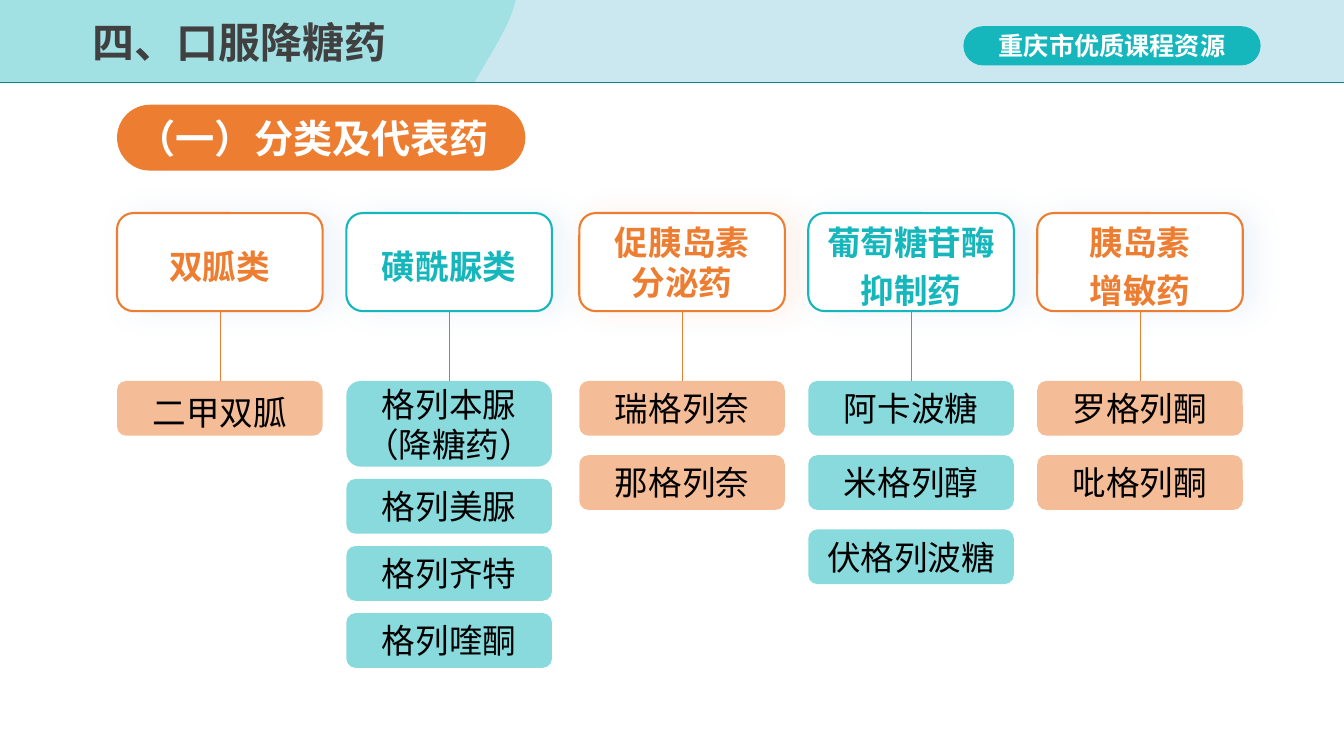
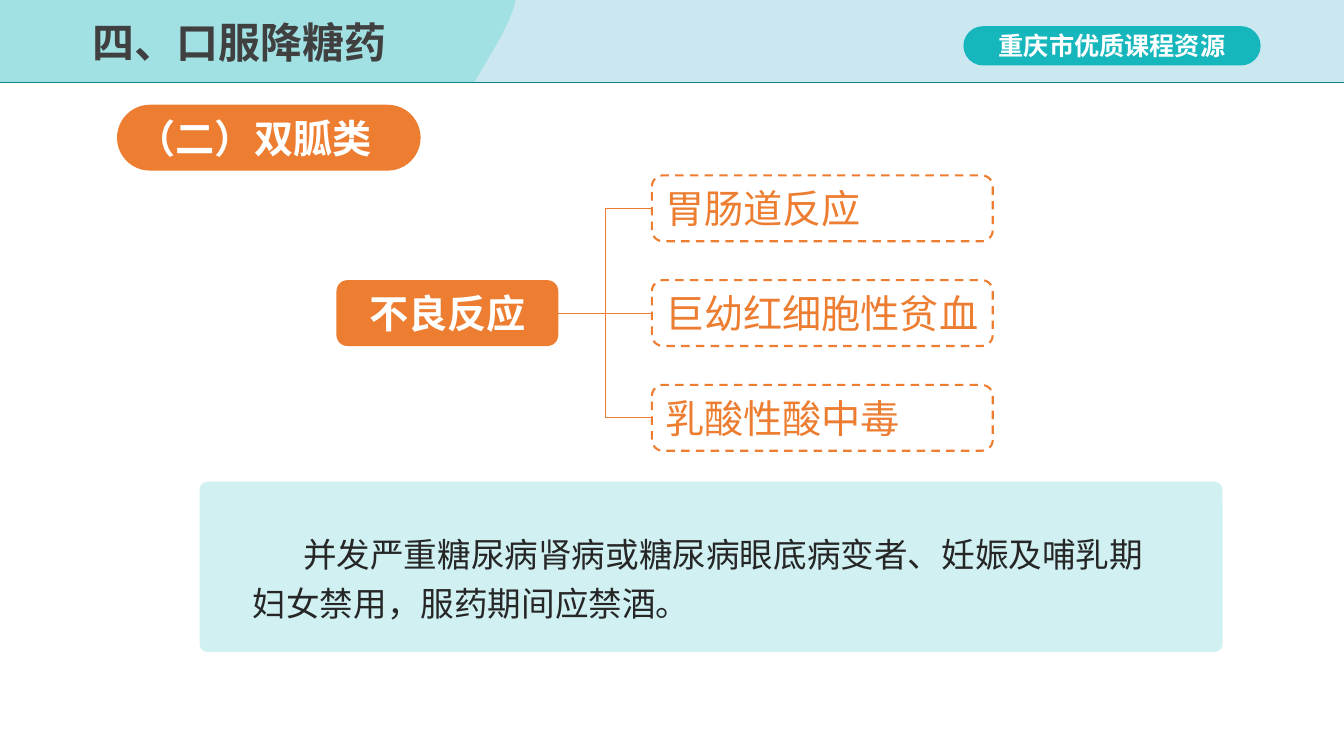
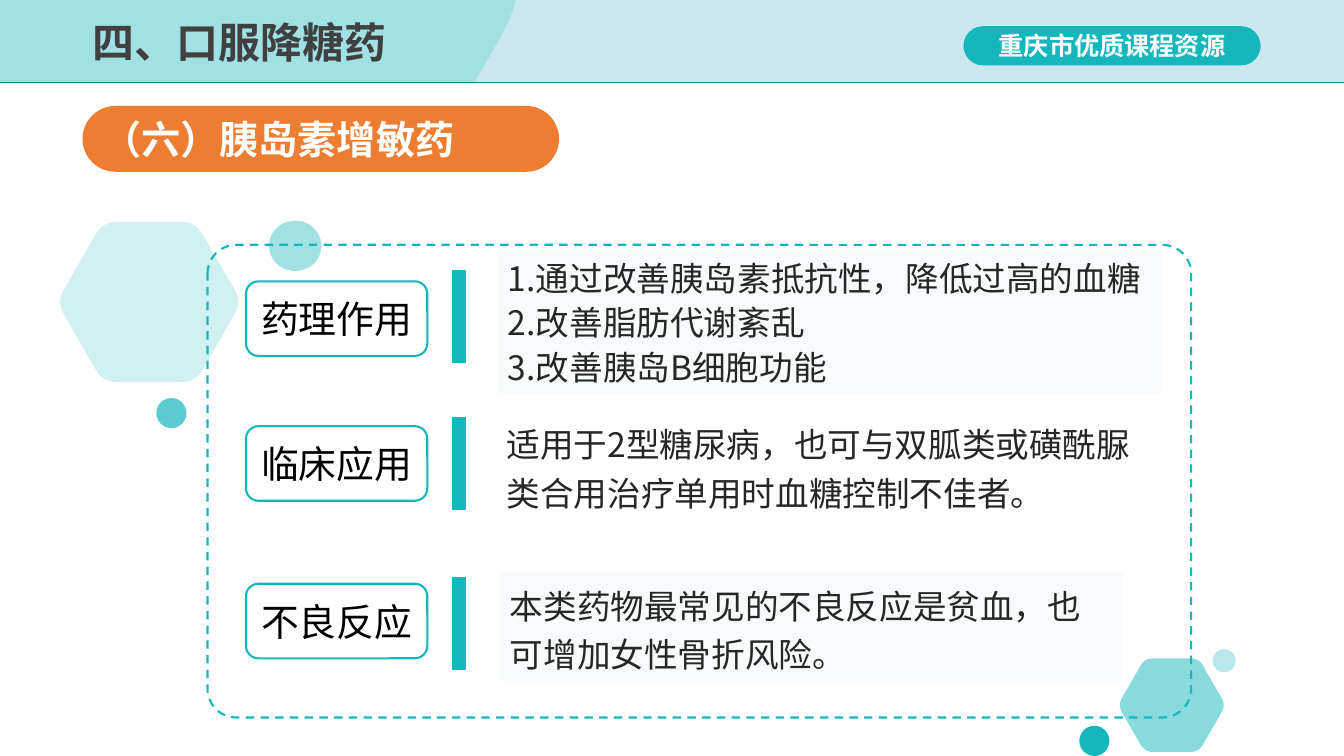
import math

from lxml import etree
from pptx import Presentation
from pptx.dml.color import RGBColor
from pptx.enum import dml, shapes, text
from pptx.oxml import ns
from pptx.util import Cm, Pt

TEAL = RGBColor(0x15, 0xB6, 0xBC)
DARK_TEAL = RGBColor(0x0F, 0x85, 0x8B)
ORANGE = RGBColor(0xED, 0x7D, 0x31)
PALE_BLUE = RGBColor(0xDE, 0xEB, 0xF7)
PANEL_BLUE = RGBColor(0xCC, 0xE8, 0xF1)
SHADOW_BLUE = RGBColor(0x5B, 0x9B, 0xD5)
WHITE = RGBColor(0xFF, 0xFF, 0xFF)
BLACK = RGBColor(0, 0, 0)
TITLE_GRAY = RGBColor(0x40, 0x40, 0x40)
BODY_GRAY = RGBColor(0x26, 0x26, 0x26)
FONT = "Noto Sans CJK SC"

RECT = shapes.MSO_SHAPE.RECTANGLE
ROUND = shapes.MSO_SHAPE.ROUNDED_RECTANGLE
OVAL = shapes.MSO_SHAPE.OVAL
STRAIGHT = shapes.MSO_CONNECTOR.STRAIGHT
ELBOW = shapes.MSO_CONNECTOR.ELBOW
LEFT, CENTER = text.PP_ALIGN.LEFT, text.PP_ALIGN.CENTER
TOP, MIDDLE = text.MSO_ANCHOR.TOP, text.MSO_ANCHOR.MIDDLE


def paint(shape, fill=None, alpha=100, line=None, width=1.5, dash=None,
          radius=None, shadow=None):
    """Set fill, outline, corner radius and shadow; alpha is opacity in percent."""
    properties = shape.element.spPr
    if fill is not None:
        shape.fill.solid()
        shape.fill.fore_color.rgb = fill
        if alpha < 100:
            color = properties.find(ns.qn("a:solidFill"))[0]
            etree.SubElement(color, ns.qn("a:alpha"), val=str(alpha * 1000))
    elif hasattr(shape, "fill"):
        shape.fill.background()
    if line is None:
        shape.line.fill.background()
    else:
        shape.line.color.rgb = line
        shape.line.width = Pt(width)
        if dash is not None:
            shape.line.dash_style = dash
    if radius is not None:
        shape.adjustments[0] = radius
    effects = etree.SubElement(properties, ns.qn("a:effectLst"))
    if shadow is not None:
        outer = etree.SubElement(effects, ns.qn("a:outerShdw"), blurRad=str(Pt(20)),
                                 dist=str(Pt(8)), dir="0", rotWithShape="0")
        color = etree.SubElement(outer, ns.qn("a:srgbClr"), val=str(shadow))
        etree.SubElement(color, ns.qn("a:alpha"), val="10000")
    return shape


def write(shape, words, size, color, bold=False, align=LEFT, spacing=1.0,
          anchor=MIDDLE, wrap=True, indent=None):
    """Fill a shape with text, one paragraph for each line of words."""
    frame = shape.text_frame
    frame.word_wrap = wrap
    frame.vertical_anchor = anchor
    frame.text = words
    for para in frame.paragraphs:
        para.alignment = align
        para.line_spacing = spacing
        if indent is not None:
            para._p.get_or_add_pPr().set("indent", str(indent))
        for span in para.runs:
            look = {"name": FONT, "size": Pt(size), "bold": bold}
            for name, value in look.items():
                setattr(span.font, name, value)
            span.font.color.rgb = color
            etree.SubElement(span._r.get_or_add_rPr(), ns.qn("a:ea"), typeface=FONT)


deck = Presentation()
deck.slide_width, deck.slide_height = Cm(33.87), Cm(19.05)
layout = deck.slide_layouts[5]
for holder in list(layout.placeholders):
    if holder.placeholder_format.type != shapes.PP_PLACEHOLDER.TITLE:
        holder.element.getparent().remove(holder.element)

# Pages with their title and section pill
sections = [
    ("（一）分类及代表药", 2.95, 2.64, 10.29),
    ("（二）双胍类", 2.95, 2.64, 7.65),
    ("（六）胰岛素增敏药", 2.08, 2.67, 12.01),
]
pages = []
for heading, left, top, width in sections:
    page = deck.slides.add_slide(layout)
    title = page.shapes.title
    title.left, title.top, title.width, title.height = Cm(2.08), Cm(0.2), Cm(14.15), Cm(1.88)
    write(title, "四、口服降糖药", 30, TITLE_GRAY, bold=True, spacing=0.9)
    pill = page.shapes.add_shape(ROUND, Cm(left), Cm(top), Cm(width), Cm(1.66))
    paint(pill, ORANGE, radius=0.5)
    write(pill, heading, 28, WHITE, bold=True)
    pages.append(page)
classes_page, biguanide_page, sensitizer_page = pages

# Header band, drawn once and moved into the layout
drawing = classes_page.shapes
band = paint(drawing.add_shape(RECT, 0, 0, deck.slide_width, Cm(2.08)), TEAL, 40)

curve = [(11.96, 2.08), (12.34, 1.4), (12.88, 0.61), (13, 0)]
edge = []
for step in range(13):
    t = step / 12
    weights = [(1 - t) ** 3, 3 * t * (1 - t) ** 2, 3 * t * t * (1 - t), t ** 3]
    edge.append(tuple(Cm(sum(w * point[axis] for w, point in zip(weights, curve)))
                      for axis in (0, 1)))
builder = drawing.build_freeform(deck.slide_width, 0)
builder.add_line_segments([(deck.slide_width, Cm(2.08))] + edge)
sweep = paint(builder.convert_to_shape(), PALE_BLUE, 70)

badge = paint(drawing.add_shape(ROUND, Cm(24.28), Cm(0.66), Cm(7.49), Cm(0.99)),
              TEAL, radius=0.5)
write(badge, "重庆市优质课程资源", 18, WHITE, bold=True, align=CENTER)
rule = paint(drawing.add_connector(STRAIGHT, 0, Cm(2.08), deck.slide_width, Cm(2.08)),
             line=DARK_TEAL, width=1)
for position, part in enumerate((band, sweep, badge, rule), start=2):
    layout.shapes.element.insert(position, part.element)

# Drug classes: a header box, a stem and the drugs below
COLUMN_WIDTH, DRUG_HEIGHT = 5.18, 1.38
columns = [
    # left, class, colour, shadow, class spacing, drug spacing, first height, gap, drugs
    (2.95, "双胍类", ORANGE, SHADOW_BLUE, 1.2, 1.2, DRUG_HEIGHT, 0.49, ["二甲双胍"]),
    (8.73, "磺酰脲类", TEAL, SHADOW_BLUE, 1.2, 1.0, 2.16, 0.31,
     ["格列本脲（降糖药）", "格列美脲", "格列齐特", "格列喹酮"]),
    (14.6, "促胰岛素\n分泌药", ORANGE, ORANGE, 1.0, 1.0, DRUG_HEIGHT, 0.49,
     ["瑞格列奈", "那格列奈"]),
    (20.37, "葡萄糖苷酶\n抑制药", TEAL, SHADOW_BLUE, 1.2, 1.0, DRUG_HEIGHT, 0.49,
     ["阿卡波糖", "米格列醇", "伏格列波糖"]),
    (26.14, "胰岛素\n增敏药", ORANGE, SHADOW_BLUE, 1.2, 1.0, DRUG_HEIGHT, 0.49,
     ["罗格列酮", "吡格列酮"]),
]
for left, name, color, shadow, name_spacing, drug_spacing, height, gap, drugs in columns:
    box = drawing.add_shape(ROUND, Cm(left), Cm(5.37), Cm(COLUMN_WIDTH), Cm(2.47))
    paint(box, WHITE, line=color, shadow=shadow)
    write(box, name, 24, color, bold=True, align=CENTER, spacing=name_spacing, wrap=False)
    middle = Cm(left + COLUMN_WIDTH / 2)
    paint(drawing.add_connector(STRAIGHT, middle, Cm(7.84), middle, Cm(9.6)),
          line=color, width=0.25)
    top = 9.6
    for drug in drugs:
        box = drawing.add_shape(ROUND, Cm(left), Cm(top), Cm(COLUMN_WIDTH), Cm(height))
        paint(box, color, 50)
        write(box, drug, 24, BLACK, align=CENTER, spacing=drug_spacing)
        top += height + gap
        height = DRUG_HEIGHT

# Biguanides: adverse reactions and a caution
drawing = biguanide_page.shapes
root = paint(drawing.add_shape(ROUND, Cm(8.48), Cm(7.06), Cm(5.59), Cm(1.66)), ORANGE)
write(root, "不良反应", 28, WHITE, bold=True, align=CENTER)
reactions = [("胃肠道反应", ELBOW), ("巨幼红细胞性贫血", STRAIGHT), ("乳酸性酸中毒", ELBOW)]
for row, (reaction, kind) in enumerate(reactions):
    box = drawing.add_shape(ROUND, Cm(16.43), Cm(4.42 + 2.64 * row), Cm(8.59), Cm(1.66))
    paint(box, line=ORANGE, dash=dml.MSO_LINE.DASH)
    write(box, reaction, 28, ORANGE)
    branch = drawing.add_connector(kind, 0, 0, 0, 0)
    branch.begin_connect(root, 3)
    branch.end_connect(box, 1)
    paint(branch, line=ORANGE, width=0.5)
paint(drawing.add_shape(ROUND, Cm(5.03), Cm(12.14), Cm(25.78), Cm(4.29)),
      TEAL, 20, radius=0.045)
caution = drawing.add_textbox(Cm(6.12), Cm(13.13), Cm(23.57), Cm(2.64))
write(caution, "并发严重糖尿病肾病或糖尿病眼底病变者、妊娠及哺乳期妇女禁用，服药期间应禁酒。",
      24, BODY_GRAY, spacing=1.2, anchor=TOP, indent=Cm(1.27))

# Insulin sensitizers: hexagons with rounded corners, a frame and dots
drawing = sensitizer_page.shapes
CUT = 0.15
for center_x, center_y, radius, alpha in [(3.76, 7.61, 2.33, 20), (29.53, 17.77, 1.36, 50)]:
    corners = [(center_x + radius * math.cos(math.radians(60 * k)),
                center_y + radius * math.sin(math.radians(60 * k))) for k in range(6)]
    outline = []
    for k, corner in enumerate(corners):
        before, after = corners[k - 1], corners[(k + 1) % 6]
        for step in range(7):
            t = step / 6
            pull_back, pull_on = CUT * (1 - t) ** 2, CUT * t ** 2
            outline.append(tuple(Cm(c + pull_back * (b - c) + pull_on * (a - c))
                                 for b, c, a in zip(before, corner, after)))
    builder = drawing.build_freeform(*outline[0])
    builder.add_line_segments(outline[1:])
    paint(builder.convert_to_shape(), TEAL, alpha)

paint(drawing.add_shape(ROUND, Cm(5.23), Cm(6.17), Cm(24.79), Cm(11.91)),
      line=TEAL, dash=dml.MSO_LINE.DASH, radius=0.061)
dots = [
    (3.94, 10.03, 0.76, 0.76, 70),
    (6.78, 5.56, 1.32, 1.27, 40),
    (27.2, 18.29, 0.76, 0.76, 100),
    (30.56, 16.36, 0.58, 0.58, 30),
]
for *place, alpha in dots:
    paint(drawing.add_shape(OVAL, *map(Cm, place)), TEAL, alpha)

topics = [
    # label, label top, bar top, text place, panel fill, line spacing, text
    ("药理作用", 7.09, 6.83, (12.55, 6.27, 16.71, 3.63), PANEL_BLUE, 1.1,
     "1.通过改善胰岛素抵抗性，降低过高的血糖\n2.改善脂肪代谢紊乱\n3.改善胰岛B细胞功能"),
    ("临床应用", 10.74, 10.52, (12.52, 10.36, 16.36, 2.72), None, 1.2,
     "适用于2型糖尿病，也可与双胍类或磺酰脲类合用治疗单用时血糖控制不佳者。"),
    ("不良反应", 14.71, 14.55, (12.6, 14.43, 15.7, 2.72), PANEL_BLUE, 1.2,
     "本类药物最常见的不良反应是贫血，也可增加女性骨折风险。"),
]
for label, label_top, bar_top, place, fill, spacing, words in topics:
    box = drawing.add_shape(ROUND, Cm(6.2), Cm(label_top), Cm(4.57), Cm(1.88))
    paint(box, line=TEAL)
    write(box, label, 27, BLACK, align=CENTER)
    paint(drawing.add_shape(RECT, Cm(11.4), Cm(bar_top), Cm(0.33), Cm(2.31)),
          TEAL, line=TEAL, width=1)
    panel = paint(drawing.add_shape(RECT, *map(Cm, place)), fill, 15)
    write(panel, words, 24, BODY_GRAY, spacing=spacing, anchor=TOP)

deck.save("out.pptx")
